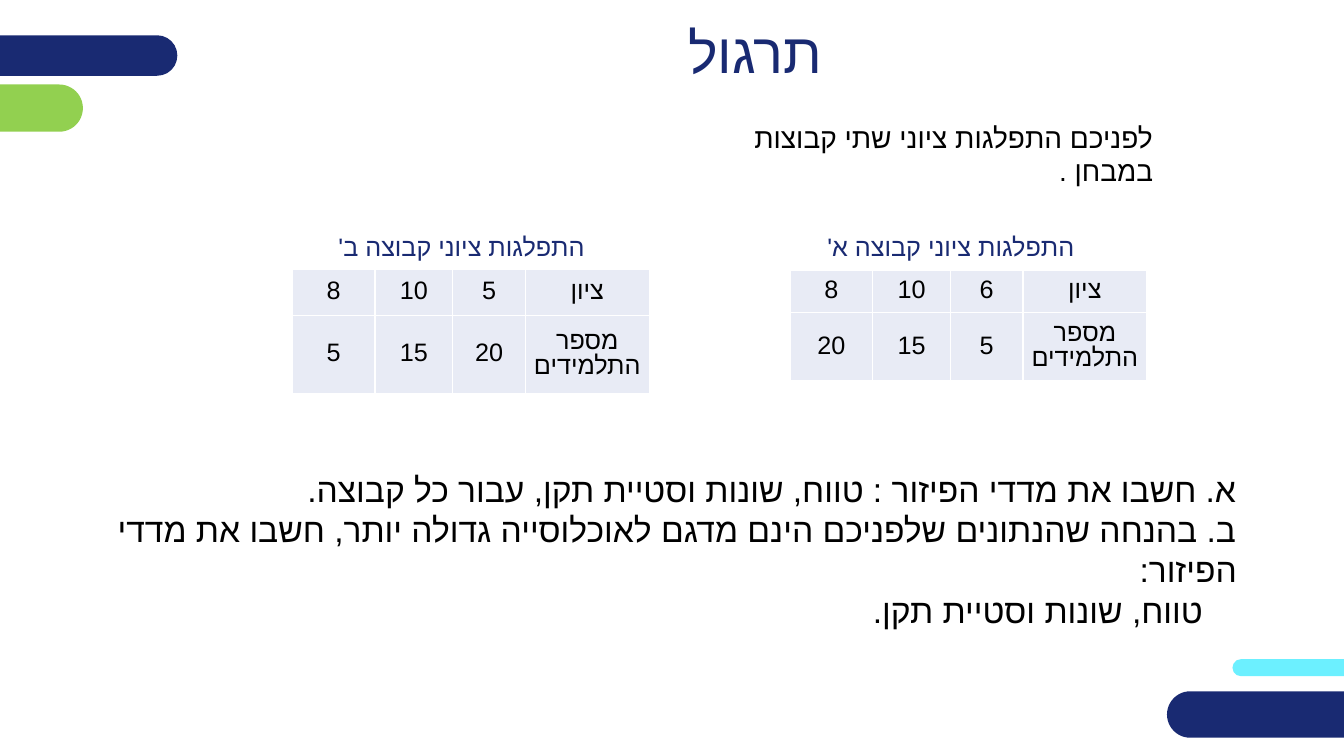
from lxml.etree import SubElement
from pptx import Presentation
from pptx.dml.color import RGBColor
from pptx.enum.shapes import MSO_SHAPE as Shape
from pptx.enum.text import MSO_ANCHOR as Anchor, PP_ALIGN as Align
from pptx.oxml.ns import qn
from pptx.util import Cm, Pt

NAVY = RGBColor(0x19, 0x2A, 0x72)
GREEN = RGBColor(0x92, 0xD0, 0x50)
CYAN = RGBColor(0x6C, 0xF0, 0xFF)
PALE = RGBColor(0xE8, 0xEB, 0xF5)
WHITE = RGBColor(0xFF, 0xFF, 0xFF)
BLACK = RGBColor(0, 0, 0)


class ExerciseSlide:
    """Draws the right-to-left exercise slide in one shared style."""

    font = "Arial"
    column_widths = (2.08, 1.96, 1.83, 3.12)

    def __init__(self, deck):
        self.slide = deck.slides.add_slide(deck.slide_layouts[6])

    def pill(self, left, top, width, height, color):
        bar = self.slide.shapes.add_shape(
            Shape.ROUNDED_RECTANGLE, Cm(left), Cm(top), Cm(width), Cm(height))
        bar.adjustments[0] = 0.5
        bar.shadow.inherit = False
        bar.fill.solid()
        bar.fill.fore_color.rgb = color
        bar.line.fill.background()

    def style(self, paragraph, size, color, align, spacing=1.0):
        paragraph.alignment = align
        paragraph.line_spacing = spacing
        paragraph._p.get_or_add_pPr().set("rtl", "1")
        for run in paragraph.runs:
            run.font.size = Pt(size)
            run.font.name = self.font
            run.font.color.rgb = color
            SubElement(run._r.get_or_add_rPr(), qn("a:cs"), typeface=self.font)

    def text(self, content, left, top, width, height, size, color=BLACK,
             align=Align.RIGHT, anchor=Anchor.TOP, spacing=1.0):
        frame = self.slide.shapes.add_textbox(
            Cm(left), Cm(top), Cm(width), Cm(height)).text_frame
        frame.word_wrap = True
        frame.vertical_anchor = anchor
        frame.text = content
        for paragraph in frame.paragraphs:
            self.style(paragraph, size, color, align, spacing)
        return frame

    def indent(self, paragraph, distance):
        for side in ("marL", "marR"):
            paragraph._p.get_or_add_pPr().set(side, str(Cm(distance)))

    def border(self, cell):
        properties = cell._tc.get_or_add_tcPr()
        for position, side in enumerate(("a:lnL", "a:lnR", "a:lnT", "a:lnB")):
            edge = SubElement(properties, qn(side), w=str(Pt(1)))
            fill = SubElement(edge, qn("a:solidFill"))
            SubElement(fill, qn("a:srgbClr"), val=str(WHITE))
            properties.insert(position, edge)

    def grades(self, rows, left, top, heights):
        table = self.slide.shapes.add_table(
            len(rows), len(self.column_widths), Cm(left), Cm(top),
            Cm(sum(self.column_widths)), Cm(sum(heights))).table
        for column, width in zip(table.columns, self.column_widths):
            column.width = Cm(width)
        for row, height, values in zip(table.rows, heights, rows):
            row.height = Cm(height)
            for cell, value in zip(row.cells, values):
                cell.text = value
                cell.vertical_anchor = Anchor.MIDDLE
                cell.margin_left = cell.margin_right = Cm(0.2)
                cell.margin_top = cell.margin_bottom = Cm(0.2)
                cell.fill.solid()
                cell.fill.fore_color.rgb = PALE
                self.border(cell)
                self.style(cell.text_frame.paragraphs[0], 18, BLACK,
                           Align.CENTER, 0.87)


def main():
    deck = Presentation()
    deck.slide_width, deck.slide_height = Cm(33.87), Cm(19.05)
    page = ExerciseSlide(deck)

    page.pill(31.06, 16.61, 4.42, 0.43, CYAN)
    page.pill(-1.14, 2.13, 3.23, 1.19, GREEN)
    page.pill(-1.35, 0.89, 5.82, 1.02, NAVY)
    page.pill(29.41, 17.42, 6.1, 1.17, NAVY)

    page.text("תרגול", 4.83, 0.51, 28.4, 1.78, 40, NAVY,
              Align.CENTER, Anchor.MIDDLE, 0.9)
    page.text("לפניכם התפלגות ציוני שתי קבוצות במבחן .",
              17.04, 2.9, 12.27, 1.12, 20)

    groups = (
        ("התפלגות ציוני קבוצה א'", 16.38, 5.71, 19.91, 6.81, (1.05, 1.68),
         ("8", "10", "6"), ("20", "15", "5")),
        ("התפלגות ציוני קבוצה ב'", 4.04, 5.69, 7.37, 6.78, (1.17, 1.96),
         ("8", "10", "5"), ("5", "15", "20")),
    )
    for caption, caption_left, caption_top, left, top, heights, scores, pupils in groups:
        page.text(caption, caption_left, caption_top, 10.95, 1.02, 18, NAVY,
                  anchor=Anchor.MIDDLE)
        page.grades(((*scores, "ציון"), (*pupils, "מספר התלמידים")),
                    left, top, heights)

    questions = page.text(
        "א. חשבו את מדדי הפיזור : טווח, שונות וסטיית תקן, עבור כל קבוצה.\n"
        "ב. בהנחה שהנתונים שלפניכם הינם מדגם לאוכלוסייה גדולה יותר, חשבו את מדדי הפיזור:\n"
        "טווח, שונות וסטיית תקן.",
        1.57, 11.68, 29.85, 3.33, 24)
    page.indent(questions.paragraphs[-1], 0.85)

    deck.save("out.pptx")


if __name__ == "__main__":
    main()
